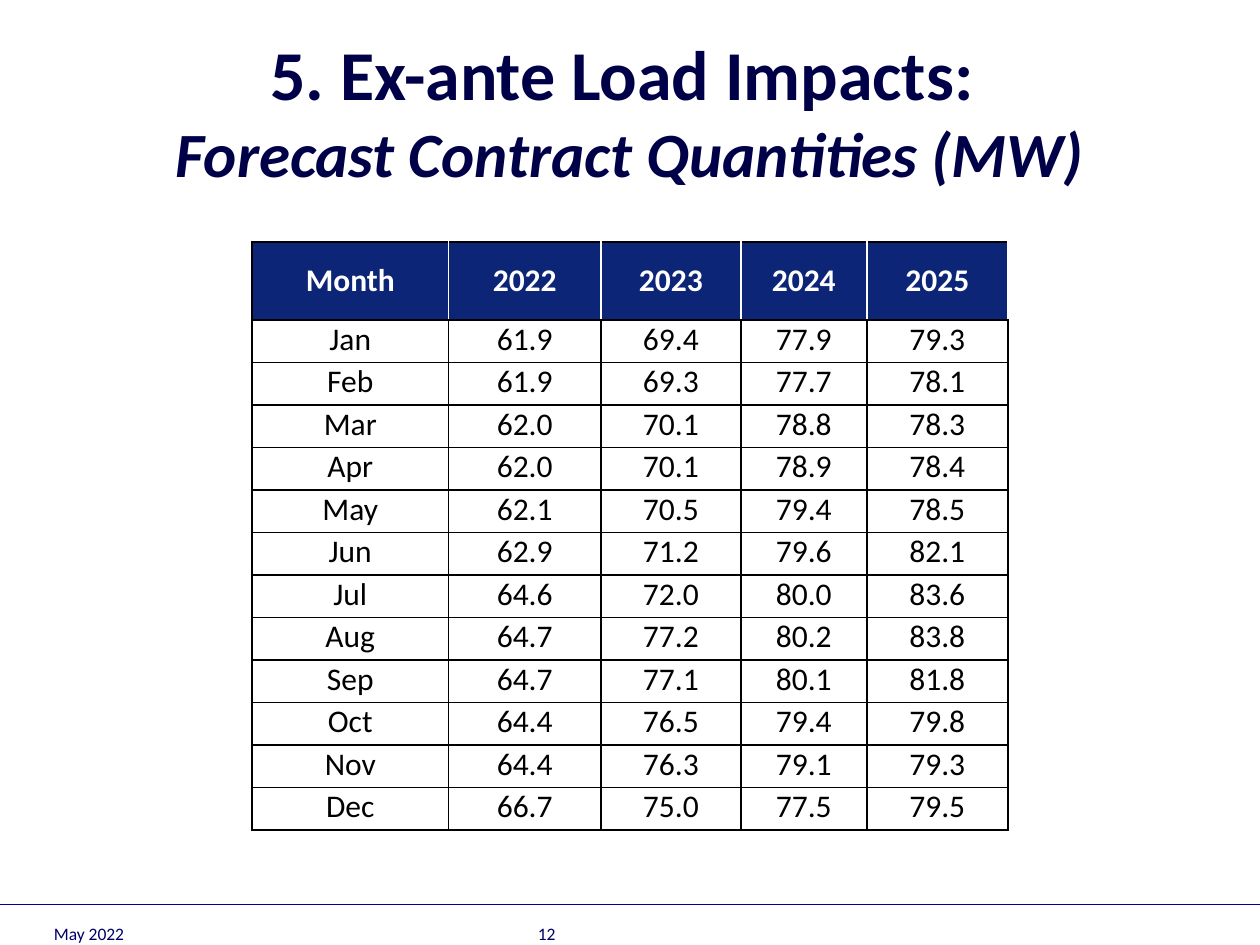
from dataclasses import dataclass
from pptx import Presentation
from pptx.dml.color import RGBColor as RGB
from pptx.enum.shapes import MSO_CONNECTOR as Conn
from pptx.enum.text import MSO_ANCHOR as Anchor, MSO_AUTO_SIZE as Auto, PP_ALIGN as Align
from pptx.oxml.ns import qn
from pptx.util import Inches as In, Pt
from lxml.etree import SubElement as Sub

TITLE = "5. Ex-ante Load Impacts: "
SUBTITLE = "Forecast Contract Quantities (MW)"
FOOTER = [("May 2022", 0.33), ("12", 4.17)]
HEAD = ["Month", "2022", "2023", "2024", "2025"]
LOADS = [
    ("Jan", 61.9, 69.4, 77.9, 79.3),
    ("Feb", 61.9, 69.3, 77.7, 78.1),
    ("Mar", 62.0, 70.1, 78.8, 78.3),
    ("Apr", 62.0, 70.1, 78.9, 78.4),
    ("May", 62.1, 70.5, 79.4, 78.5),
    ("Jun", 62.9, 71.2, 79.6, 82.1),
    ("Jul", 64.6, 72.0, 80.0, 83.6),
    ("Aug", 64.7, 77.2, 80.2, 83.8),
    ("Sep", 64.7, 77.1, 80.1, 81.8),
    ("Oct", 64.4, 76.5, 79.4, 79.8),
    ("Nov", 64.4, 76.3, 79.1, 79.3),
    ("Dec", 66.7, 75.0, 77.5, 79.5),
]
COLS = [1.56, 1.21, 1.11, 1, 1.12]
HEAD_H, ROW_H = 0.62, 0.3375
WIDE, HIGH = 10, 7.5


@dataclass(frozen=True)
class Theme:
    face: str = "Calibri"
    title: str = "000048"
    foot: str = "000066"
    rule: str = "000099"
    head: str = "0C2577"
    ink: str = "000000"
    paper: str = "FFFFFF"
    big: int = 40
    mid: int = 36
    body: int = 18
    small: int = 10


T = Theme()


def style(para, size, color, bold=False):
    font = para.font
    font.name, font.size, font.bold = T.face, Pt(size), bold
    font.color.rgb = RGB.from_string(color)


def edge(cell, side, color):
    line = Sub(cell._tc.get_or_add_tcPr(), qn("a:" + side), w=str(Pt(1)))
    Sub(Sub(line, qn("a:solidFill")), qn("a:srgbClr"), val=color)


def fill_cell(cell, text, row, col):
    top = row == 0
    cell.text = text
    cell.margin_left = cell.margin_right = In(0.07)
    cell.margin_top = cell.margin_bottom = 0
    cell.vertical_anchor = Anchor.MIDDLE if top else Anchor.TOP
    para = cell.text_frame.paragraphs[0]
    para.alignment = Align.CENTER
    style(para, T.body, T.paper if top else T.ink, top)
    side = T.paper if top else T.ink
    edge(cell, "lnL", side if col else T.ink)
    edge(cell, "lnR", side)
    edge(cell, "lnT", T.ink)
    edge(cell, "lnB", T.ink)
    cell.fill.solid()
    cell.fill.fore_color.rgb = RGB.from_string(T.head if top else T.paper)


def add_title(slide):
    box = slide.shapes.title
    box.left, box.top, box.width, box.height = In(0.5), In(0.25), In(WIDE - 1), In(1.25)
    frame = box.text_frame
    frame.auto_size, frame.vertical_anchor = Auto.NONE, Anchor.MIDDLE
    para = frame.paragraphs[0]
    para.alignment = Align.CENTER
    style(para, T.big, T.title, True)
    para.add_run().text = TITLE
    para.add_line_break()
    sub = para.add_run()
    sub.text = SUBTITLE
    sub.font.size, sub.font.italic = Pt(T.mid), True


def add_grid(slide):
    rows = [HEAD] + [[m] + [f"{v:.1f}" for v in vals] for m, *vals in LOADS]
    high = HEAD_H + ROW_H * len(LOADS)
    left = (WIDE - sum(COLS)) / 2
    grid = slide.shapes.add_table(
        len(rows), len(COLS), In(left), In(1.92), In(sum(COLS)), In(high)).table
    grid.first_row = grid.horz_banding = False
    for col, wide in zip(grid.columns, COLS):
        col.width = In(wide)
    for r, row in enumerate(rows):
        grid.rows[r].height = In(ROW_H if r else HEAD_H)
        for c, text in enumerate(row):
            fill_cell(grid.cell(r, c), text, r, c)


def add_foot(slide):
    rule = slide.shapes.add_connector(Conn.STRAIGHT, 0, In(7.18), In(WIDE), In(7.18))
    rule.line.color.rgb = RGB.from_string(T.rule)
    rule.line.width = Pt(0.75)
    Sub(rule._element.spPr, qn("a:effectLst"))
    for text, left in FOOTER:
        box = slide.shapes.add_textbox(In(left), In(7.02), In(2.33), In(0.52))
        frame = box.text_frame
        frame.word_wrap, frame.vertical_anchor = True, Anchor.BOTTOM
        frame.text = text
        style(frame.paragraphs[0], T.small, T.foot)


def main():
    deck = Presentation()
    deck.slide_width, deck.slide_height = In(WIDE), In(HIGH)
    slide = deck.slides.add_slide(deck.slide_layouts[5])
    add_foot(slide)
    add_title(slide)
    add_grid(slide)
    deck.save("out.pptx")


if __name__ == "__main__":
    main()
